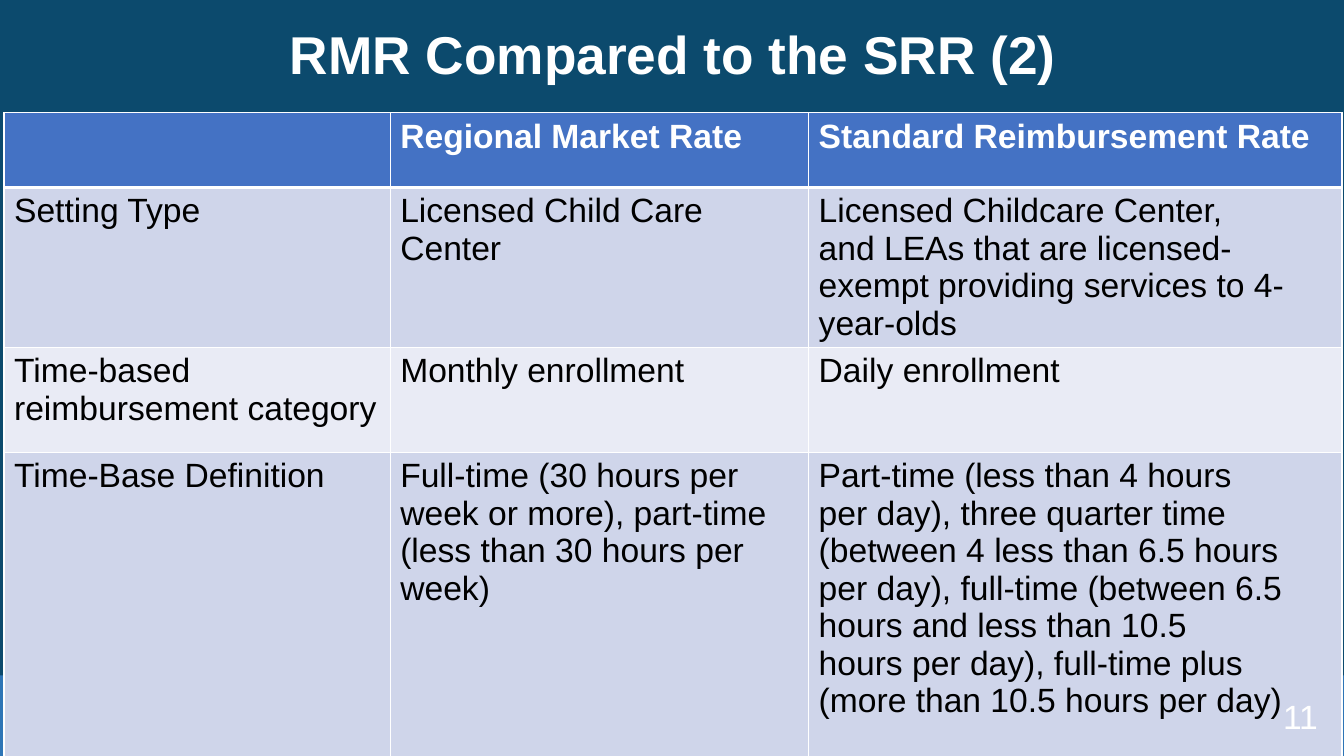
from pptx import Presentation
from pptx.dml.color import RGBColor
from pptx.enum.shapes import MSO_SHAPE
from pptx.enum.text import MSO_ANCHOR, MSO_AUTO_SIZE, PP_ALIGN
from pptx.oxml import parse_xml
from pptx.oxml.ns import nsdecls
from pptx.util import Inches, Pt

RECTANGLE = MSO_SHAPE.RECTANGLE
MIDDLE = MSO_ANCHOR.MIDDLE
NO_AUTOFIT = MSO_AUTO_SIZE.NONE
CENTER, RIGHT = PP_ALIGN.CENTER, PP_ALIGN.RIGHT
NO_BREAK_SPACE = chr(160)  # written as ~ in the table texts

COLORS = {
    "background": "0C4A6D",
    "band": "2E75B6",
    "header": "4472C4",
    "odd row": "CFD5EA",
    "even row": "E9EBF5",
    "white": "FFFFFF",
    "black": "000000",
}
WIDTH, HEIGHT = 13.33, 7.5
BAND_HEIGHT = 0.8
COLUMN_WIDTHS = [3.83, 4.15, 5.29]
ROW_HEIGHTS = [0.74, 1.33, 1.04, 3.07]
ROW_FILLS = ["header", "odd row", "even row", "odd row"]
ROWS = [
    ["", "Regional Market Rate", "Standard Reimbursement Rate"],
    ["Setting Type",
     "Licensed Child Care Center",
     "Licensed~Childcare~Center, and~LEAs that are licensed-exempt "
     "providing services to 4-year-olds"],
    ["Time-based reimbursement~category",
     "Monthly enrollment",
     "Daily enrollment"],
    ["Time-Base Definition",
     "Full-time (30 hours per week~or more), part-time (less than~30 hours per week)",
     "Part-time (less than 4 hours per~day), three quarter time "
     "(between 4~less than 6.5 hours per day),~full-time (between 6.5 hours "
     "and less~than 10.5 hours~per~day), full-time~plus "
     "(more than 10.5 hours per day)"],
]


def add_run(para, text, size, color, bold=False):
    span = para.add_run()
    span.text = text
    span.font.name = "Arial"
    span.font.size = Pt(size)
    span.font.bold = bold
    span.font.color.rgb = RGBColor.from_string(COLORS[color])


def add_borders(cell, bottom_width):
    """Draw white cell borders; call before the fill, which must follow them."""
    properties = cell._tc.get_or_add_tcPr()
    for side, width in (("L", 1), ("R", 1), ("T", 1), ("B", bottom_width)):
        properties.append(parse_xml(
            f'<a:ln{side} {nsdecls("a")} w="{Pt(width)}"><a:solidFill>'
            f'<a:srgbClr val="{COLORS["white"]}"/></a:solidFill></a:ln{side}>'))


deck = Presentation()
deck.slide_width, deck.slide_height = Inches(WIDTH), Inches(HEIGHT)
page = deck.slides.add_slide(deck.slide_layouts[5])
page.background.fill.solid()
page.background.fill.fore_color.rgb = RGBColor.from_string(COLORS["background"])

# Footer band
band = page.shapes.add_shape(RECTANGLE, 0, Inches(HEIGHT - BAND_HEIGHT),
                             Inches(WIDTH), Inches(BAND_HEIGHT))
band.shadow.inherit = False
band.fill.solid()
band.fill.fore_color.rgb = RGBColor.from_string(COLORS["band"])
band.line.fill.background()

# Title
title = page.shapes.title
title.left, title.top = Inches(0.17), Inches(0.14)
title.width, title.height = Inches(13.01), Inches(0.85)
title.text_frame.auto_size = NO_AUTOFIT
title.text_frame.vertical_anchor = MIDDLE
para = title.text_frame.paragraphs[0]
para.alignment = CENTER
para.line_spacing = 0.9
add_run(para, "RMR Compared to the SRR (2)", 38, "white", bold=True)

# Rate comparison
table = page.shapes.add_table(
    len(ROWS), len(COLUMN_WIDTHS), Inches(0.04), Inches(1.12),
    Inches(sum(COLUMN_WIDTHS)), Inches(sum(ROW_HEIGHTS))).table
for column, width in zip(table.columns, COLUMN_WIDTHS):
    column.width = Inches(width)
for row_number, texts in enumerate(ROWS):
    table.rows[row_number].height = Inches(ROW_HEIGHTS[row_number])
    is_header = row_number == 0
    for column_number, text in enumerate(texts):
        cell = table.cell(row_number, column_number)
        add_borders(cell, 3 if is_header else 1)
        cell.fill.solid()
        cell.fill.fore_color.rgb = RGBColor.from_string(COLORS[ROW_FILLS[row_number]])
        if text:
            add_run(cell.text_frame.paragraphs[0], text.replace("~", NO_BREAK_SPACE),
                    24, "white" if is_header else "black", bold=is_header)

# Page number
number_box = page.shapes.add_textbox(Inches(10.17), Inches(6.9), Inches(3), Inches(0.4))
number_box.text_frame.word_wrap = True
number_box.text_frame.vertical_anchor = MIDDLE
para = number_box.text_frame.paragraphs[0]
para.alignment = RIGHT
add_run(para, "11", 24, "white")

deck.save("out.pptx")
